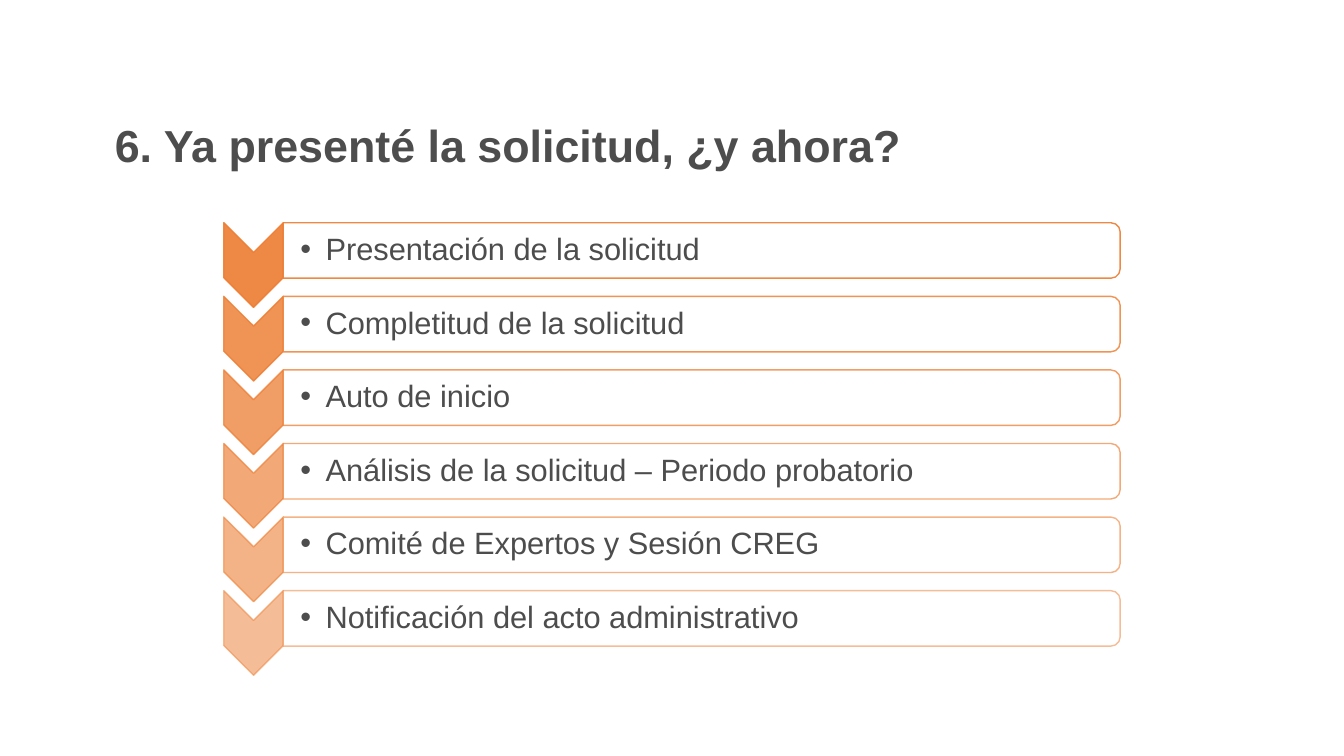
import pptx
import pptx.util
import pptx.dml.color
import pptx.enum.shapes
import pptx.enum.text
import pptx.oxml
import pptx.oxml.ns
from lxml import etree

Inches = pptx.util.Inches
RGBColor = pptx.dml.color.RGBColor
Shape = pptx.enum.shapes.MSO_SHAPE
Anchor = pptx.enum.text.MSO_ANCHOR
qn = pptx.oxml.ns.qn

TITLE = "6. Ya presenté la solicitud, ¿y ahora?"
STEPS = [
    "Presentación de la solicitud",
    "Completitud de la solicitud",
    "Auto de inicio",
    "Análisis de la solicitud – Periodo probatorio",
    "Comité de Expertos y Sesión CREG",
    "Notificación del acto administrativo",
]

ORANGE = RGBColor(0xED, 0x7D, 0x31)
WHITE = RGBColor(0xFF, 0xFF, 0xFF)
GRAY = RGBColor(0x4E, 0x4D, 0x4D)

TITLE_FONT = {"name": "Arial", "size": pptx.util.Pt(32), "bold": True}
STEP_FONT = {"name": "Arial", "size": pptx.util.Pt(22), "bold": False}
STEP_FRAME = {
    "margin_left": Inches(0.17),
    "margin_right": Inches(0.02),
    "margin_top": Inches(0.02),
    "margin_bottom": Inches(0.02),
}

FIRST_TOP = 2.21
PITCH = 0.73
CHEVRON_LEFT, CHEVRON_WIDTH, CHEVRON_HEIGHT = 2.22, 0.59, 0.84
BAR_LEFT, BAR_WIDTH, BAR_HEIGHT = 2.81, 8.3, 0.55
TEXT_WIDTH, TEXT_HEIGHT = 8.27, 0.49
FIRST_OPACITY, OPACITY_STEP, BAR_OPACITY = 90, 8, 90


def set_opacity(fill, color, percent):
    fill.solid()
    fill.fore_color.rgb = color
    return percent


def add_turned_shape(shapes, kind, box, fill, fill_opacity, line_opacity):
    left, top, width, height = box
    shape = shapes.add_shape(
        kind,
        Inches(left + (width - height) / 2),
        Inches(top + (height - width) / 2),
        Inches(height),
        Inches(width),
    )
    shape.rotation = 90
    shape.shadow.inherit = False
    shape.line.width = pptx.util.Pt(1)
    parts = ((shape.fill, fill), (shape.line.fill, ORANGE))
    for part, color in parts:
        part.solid()
        part.fore_color.rgb = color
    opacities = (fill_opacity, line_opacity)
    colors = shape._element.spPr.iter(qn("a:srgbClr"))
    for element, opacity in zip(list(colors), opacities):
        etree.SubElement(element, qn("a:alpha"), val=str(opacity * 1000))


def add_text(shapes, text, box, font, anchor, frame_format):
    text_box = shapes.add_textbox(*(Inches(length) for length in box))
    frame = text_box.text_frame
    frame.word_wrap = True
    frame.vertical_anchor = anchor
    for name, value in frame_format.items():
        setattr(frame, name, value)
    paragraph = frame.paragraphs[0]
    paragraph.line_spacing = 0.9
    run = paragraph.add_run()
    run.text = text
    for name, value in font.items():
        setattr(run.font, name, value)
    run.font.color.rgb = GRAY
    return paragraph


def add_bullet(paragraph):
    properties = paragraph._p.get_or_add_pPr()
    properties.set("marL", str(Inches(0.25)))
    properties.set("indent", str(Inches(-0.25)))
    space_after = etree.SubElement(properties, qn("a:spcAft"))
    etree.SubElement(space_after, qn("a:spcPct"), val="15000")
    etree.SubElement(properties, qn("a:buFont"), typeface="Arial")
    etree.SubElement(properties, qn("a:buChar"), char="•")


def main():
    presentation = pptx.Presentation()
    presentation.slide_width = Inches(13.33)
    presentation.slide_height = Inches(7.5)
    slide = presentation.slides.add_slide(presentation.slide_layouts[6])

    add_text(slide.shapes, TITLE, (1.04, 1.23, 11.85, 0.53),
             TITLE_FONT, Anchor.BOTTOM, {})

    shapes = slide.shapes.add_group_shape().shapes
    for index, step in enumerate(STEPS):
        top = FIRST_TOP + index * PITCH
        opacity = FIRST_OPACITY - index * OPACITY_STEP
        add_turned_shape(
            shapes, Shape.CHEVRON,
            (CHEVRON_LEFT, top, CHEVRON_WIDTH, CHEVRON_HEIGHT),
            ORANGE, opacity, opacity,
        )
        add_turned_shape(
            shapes, Shape.ROUND_2_SAME_RECTANGLE,
            (BAR_LEFT, top, BAR_WIDTH, BAR_HEIGHT),
            WHITE, BAR_OPACITY, opacity,
        )
        text_top = top + (BAR_HEIGHT - TEXT_HEIGHT) / 2
        paragraph = add_text(
            shapes, step, (BAR_LEFT, text_top, TEXT_WIDTH, TEXT_HEIGHT),
            STEP_FONT, Anchor.MIDDLE, STEP_FRAME,
        )
        add_bullet(paragraph)

    presentation.save("out.pptx")


if __name__ == "__main__":
    main()
